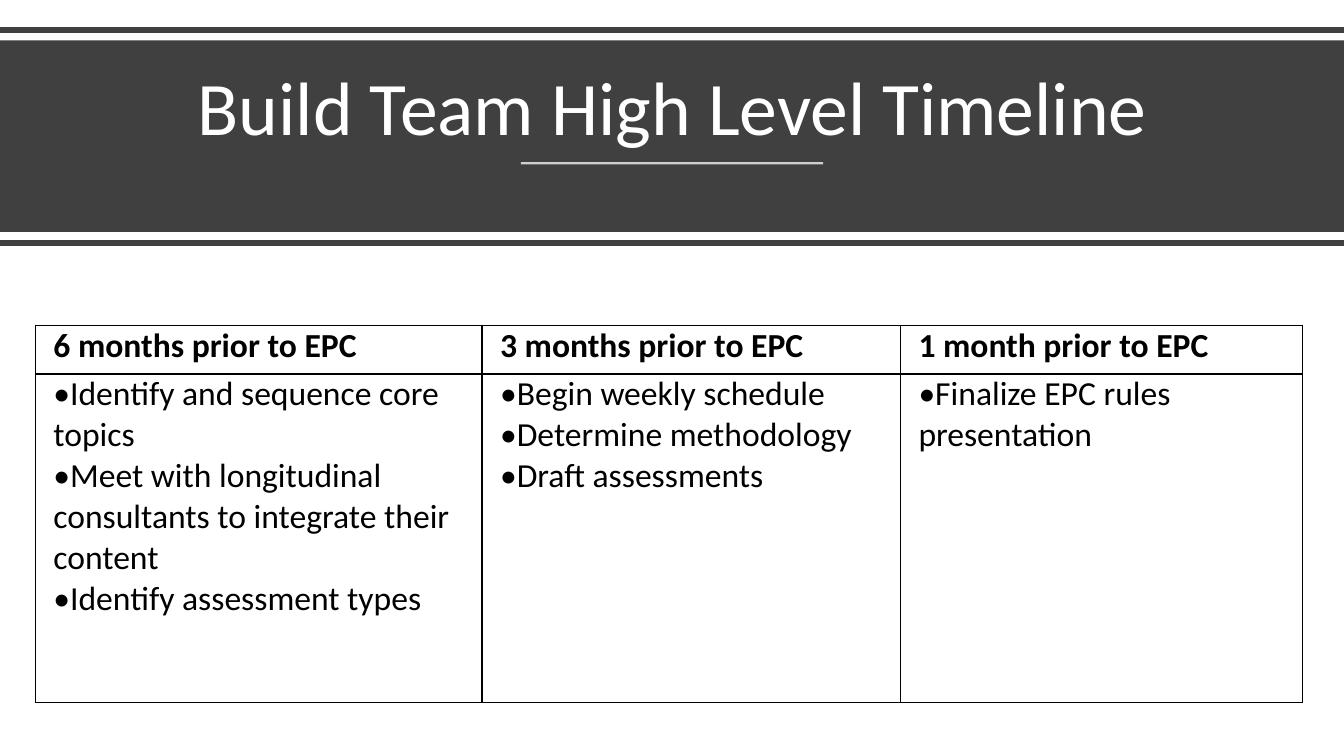
import pptx
import pptx.dml.color
import pptx.enum.shapes
import pptx.enum.text
import pptx.oxml
import pptx.oxml.ns
import pptx.util
from pptx.util import Inches

TITLE = "Build Team High Level Timeline"
TIMELINE = [
    ("6 months prior to EPC", [
        "Identify and sequence core topics",
        "Meet with longitudinal consultants to integrate their content",
        "Identify assessment types",
    ]),
    ("3 months prior to EPC", [
        "Begin weekly schedule",
        "Determine methodology",
        "Draft assessments",
    ]),
    ("1 month prior to EPC", ["Finalize EPC rules presentation"]),
]

COLORS = {"band": "404040", "white": "FFFFFF", "black": "000000"}
FONT = "Calibri"
PAGE_WIDTH, PAGE_HEIGHT = 13.33, 7.5
BAND_TOP, BAND_HEIGHT = 0.4, 1.9
RULE_HEIGHTS = (0.3, 2.41)
ACCENT_WIDTH, ACCENT_Y = 3, 1.62
TABLE_LEFT, TABLE_TOP = 0.35, 3.23
COLUMN_WIDTHS = (4.43, 4.15, 3.99)
ROW_HEIGHTS = (0.48, 3.26)
CELL_MARGIN = 0.18


def rgb(name):
    return pptx.dml.color.RGBColor.from_string(COLORS[name])


def xml_element(markup):
    """Parse an element whose tags use the a: prefix."""
    tag, rest = markup[1:].split(" ", 1)
    return pptx.oxml.parse_xml(f"<{tag} {pptx.oxml.ns.nsdecls('a')} {rest}")


def write(para, text, size, color="black", bold=False):
    span = para.add_run()
    span.text = text
    span.font.name = FONT
    span.font.size = pptx.util.Pt(size)
    span.font.bold = bold
    span.font.color.rgb = rgb(color)


def add_bullet(para):
    properties = para._p.get_or_add_pPr()
    properties.append(xml_element(f'<a:buFont typeface="{FONT}"/>'))
    properties.append(xml_element('<a:buChar char="•"/>'))


def add_rule(page, left, right, y, color, width, opacity=100):
    rule = page.shapes.add_connector(
        pptx.enum.shapes.MSO_CONNECTOR.STRAIGHT,
        Inches(left), Inches(y), Inches(right), Inches(y))
    rule.line.color.rgb = rgb(color)
    rule.line.width = pptx.util.Pt(width)
    if opacity < 100:
        fill_color = next(rule.line._ln.iter(pptx.oxml.ns.qn("a:srgbClr")))
        fill_color.append(xml_element(f'<a:alpha val="{opacity * 1000}"/>'))
    rule._element.spPr.append(xml_element("<a:effectLst />"))


def format_cell(cell):
    """Clear the fill, set the margins and draw a thin border on all sides."""
    cell.fill.background()
    cell.margin_left = cell.margin_right = Inches(CELL_MARGIN)
    cell.margin_top = cell.margin_bottom = 0
    properties = cell._tc.get_or_add_tcPr()
    for place, side in enumerate("LRTB"):
        properties.insert(place, xml_element(
            f'<a:ln{side} w="12700"><a:solidFill>'
            f'<a:srgbClr val="{COLORS["black"]}"/></a:solidFill></a:ln{side}>'))


def fill_cell(cell, lines, bold=False, bullet=False):
    format_cell(cell)
    frame = cell.text_frame
    for number, line in enumerate(lines):
        para = frame.add_paragraph() if number else frame.paragraphs[0]
        write(para, line, 24, bold=bold)
        if bullet:
            add_bullet(para)


def add_band(page):
    band = page.shapes.add_shape(
        pptx.enum.shapes.MSO_SHAPE.RECTANGLE,
        0, Inches(BAND_TOP), Inches(PAGE_WIDTH), Inches(BAND_HEIGHT))
    band.shadow.inherit = False
    band.fill.solid()
    band.fill.fore_color.rgb = rgb("band")
    band.line.fill.background()


def place_title(page):
    title = page.shapes.title
    title.left, title.top = Inches(0.58), Inches(0.54)
    title.width, title.height = Inches(12.18), Inches(1.02)
    frame = title.text_frame
    frame.word_wrap = True
    frame.auto_size = pptx.enum.text.MSO_AUTO_SIZE.NONE
    frame.vertical_anchor = pptx.enum.text.MSO_ANCHOR.BOTTOM
    para = frame.paragraphs[0]
    para.alignment = pptx.enum.text.PP_ALIGN.CENTER
    para.line_spacing = 0.9
    write(para, TITLE, 54, color="white")
    page.shapes._spTree.append(title._element)  # bring in front of the band


def add_timeline(page):
    table = page.shapes.add_table(
        len(ROW_HEIGHTS), len(TIMELINE), Inches(TABLE_LEFT), Inches(TABLE_TOP),
        Inches(sum(COLUMN_WIDTHS)), Inches(sum(ROW_HEIGHTS))).table
    table.first_row = table.horz_banding = False
    for row, height in zip(table.rows, ROW_HEIGHTS):
        row.height = Inches(height)
    for index, (heading, tasks) in enumerate(TIMELINE):
        table.columns[index].width = Inches(COLUMN_WIDTHS[index])
        fill_cell(table.cell(0, index), [heading], bold=True)
        fill_cell(table.cell(1, index), tasks, bullet=True)


def main():
    deck = pptx.Presentation()
    deck.slide_width, deck.slide_height = Inches(PAGE_WIDTH), Inches(PAGE_HEIGHT)
    page = deck.slides.add_slide(deck.slide_layouts[5])
    add_band(page)
    place_title(page)
    for y in RULE_HEIGHTS:
        add_rule(page, 0, PAGE_WIDTH, y, "band", 4)
    accent_left = (PAGE_WIDTH - ACCENT_WIDTH) / 2
    add_rule(page, accent_left, accent_left + ACCENT_WIDTH, ACCENT_Y,
             "white", 1.5, opacity=75)
    add_timeline(page)
    deck.save("out.pptx")


if __name__ == "__main__":
    main()
